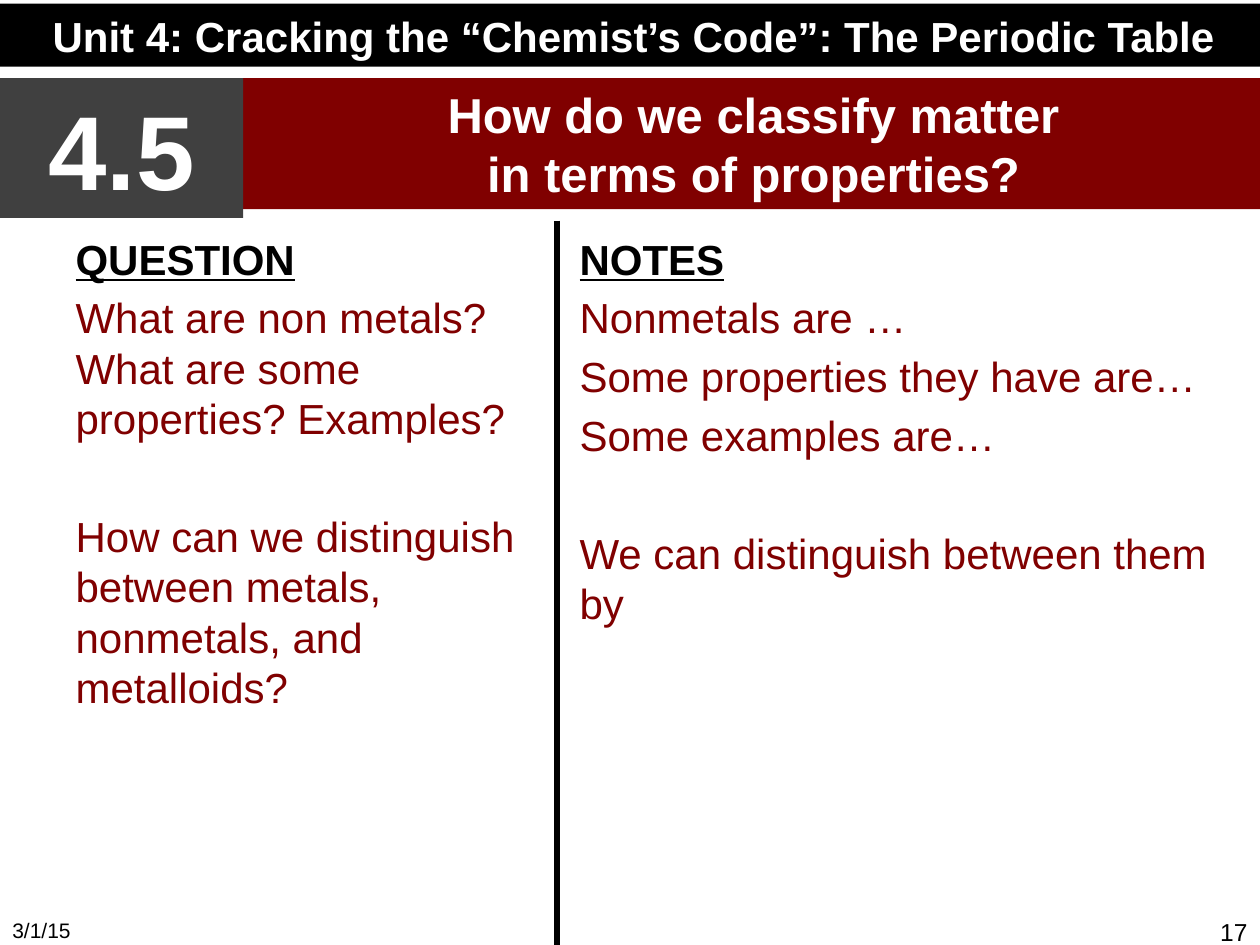
from lxml.etree import SubElement
from pptx import Presentation
from pptx.dml.color import RGBColor
from pptx.enum.shapes import MSO_CONNECTOR, MSO_SHAPE
from pptx.enum.text import MSO_ANCHOR, MSO_AUTO_SIZE, PP_ALIGN
from pptx.oxml.ns import qn
from pptx.util import Inches, Pt

BLACK = RGBColor(0x00, 0x00, 0x00)
WHITE = RGBColor(0xFF, 0xFF, 0xFF)
GRAY = RGBColor(0x40, 0x40, 0x40)
MAROON = RGBColor(0x80, 0x00, 0x00)

UNIT = "Unit 4: Cracking the “Chemist’s Code”: The Periodic Table"
LESSON = "4.5"
TITLE = ["How do we classify matter", "in terms of properties?"]
# Each column: box, heading, groups of paragraphs set apart by a wide gap
COLUMNS = [
    ((0.5, 1.8, 3.92, 4.95), "QUESTION", [
        ["What are non metals? What are some properties? Examples?"],
        ["How can we distinguish between metals, nonmetals, and metalloids?"],
    ]),
    ((4.5, 1.8, 5.5, 4.95), "NOTES", [
        ["Nonmetals are …", "Some properties they have are…", "Some examples are…"],
        ["We can distinguish between them by"],
    ]),
]
FOOTERS = [
    ((0, 7.23, 2.33, 0.27), "3/1/15", 12, PP_ALIGN.LEFT),
    ((7.67, 7.23, 2.33, 0.27), "17", 14, PP_ALIGN.RIGHT),
]
PARA_GAP, GROUP_GAP = 4.8, 38.4
HEADING = dict(size=Pt(24), bold=True, underline=True)
BODY = dict(size=Pt(24), bold=False)


def place(sp, box):
    sp.left, sp.top, sp.width, sp.height = map(Inches, box)


def frame(sp, anchor):
    tf = sp.text_frame
    tf.word_wrap = True
    tf.auto_size = MSO_AUTO_SIZE.NONE
    tf.vertical_anchor = anchor
    return tf


def write(p, text, color, align, **font):
    p.alignment = align
    r = p.add_run()
    r.text = text
    r.font.name = "Arial"
    r.font.color.rgb = color
    for key, value in font.items():
        setattr(r.font, key, value)


def fill_banner(sp, lines, fill, size):
    sp.fill.solid()
    sp.fill.fore_color.rgb = fill
    tf = frame(sp, MSO_ANCHOR.MIDDLE)
    for i, line in enumerate(lines):
        p = tf.add_paragraph() if i else tf.paragraphs[0]
        write(p, line, WHITE, PP_ALIGN.CENTER, size=Pt(size), bold=True)


def add_banner(s, box, text, fill, size):
    sp = s.shapes.add_shape(MSO_SHAPE.RECTANGLE, *map(Inches, box))
    sp.shadow.inherit = False
    sp.line.fill.background()
    fill_banner(sp, [text], fill, size)


def fill_column(sp, heading, groups):
    rows = [(heading, BLACK, 0, HEADING)]
    for g, group in enumerate(groups):
        for i, text in enumerate(group):
            gap = GROUP_GAP if g and not i else PARA_GAP
            rows.append((text, MAROON, gap, BODY))
    tf = frame(sp, MSO_ANCHOR.TOP)
    for i, (text, color, gap, font) in enumerate(rows):
        p = tf.add_paragraph() if i else tf.paragraphs[0]
        pPr = p._p.get_or_add_pPr()
        pPr.set("marL", "0")
        pPr.set("indent", "0")
        SubElement(pPr, qn("a:buNone"))
        p.space_before = Pt(gap)
        write(p, text, color, PP_ALIGN.LEFT, **font)


def main():
    prs = Presentation()
    prs.slide_width, prs.slide_height = Inches(10), Inches(7.5)
    s = prs.slides.add_slide(prs.slide_layouts.get_by_name("Two Content"))
    title, *bodies = s.placeholders

    for sp, (box, heading, groups) in zip(bodies, COLUMNS):
        place(sp, box)
        fill_column(sp, heading, groups)

    add_banner(s, (0, 0.03, 10.06, 0.5), UNIT, BLACK, 24)
    add_banner(s, (0, 0.62, 1.93, 1.11), LESSON, GRAY, 60)
    place(title, (1.93, 0.62, 8.1, 1.04))
    fill_banner(title, TITLE, MAROON, 28)

    divider = s.shapes.add_connector(
        MSO_CONNECTOR.STRAIGHT, *map(Inches, (4.42, 1.75, 4.42, 7.5)))
    divider.line.color.rgb = BLACK
    divider.line.width = Pt(3)
    SubElement(divider._element.spPr, qn("a:effectLst"))

    for box, text, size, align in FOOTERS:
        tf = frame(s.shapes.add_textbox(*map(Inches, box)), MSO_ANCHOR.TOP)
        write(tf.paragraphs[0], text, BLACK, align, size=Pt(size))

    prs.save("out.pptx")


if __name__ == "__main__":
    main()
